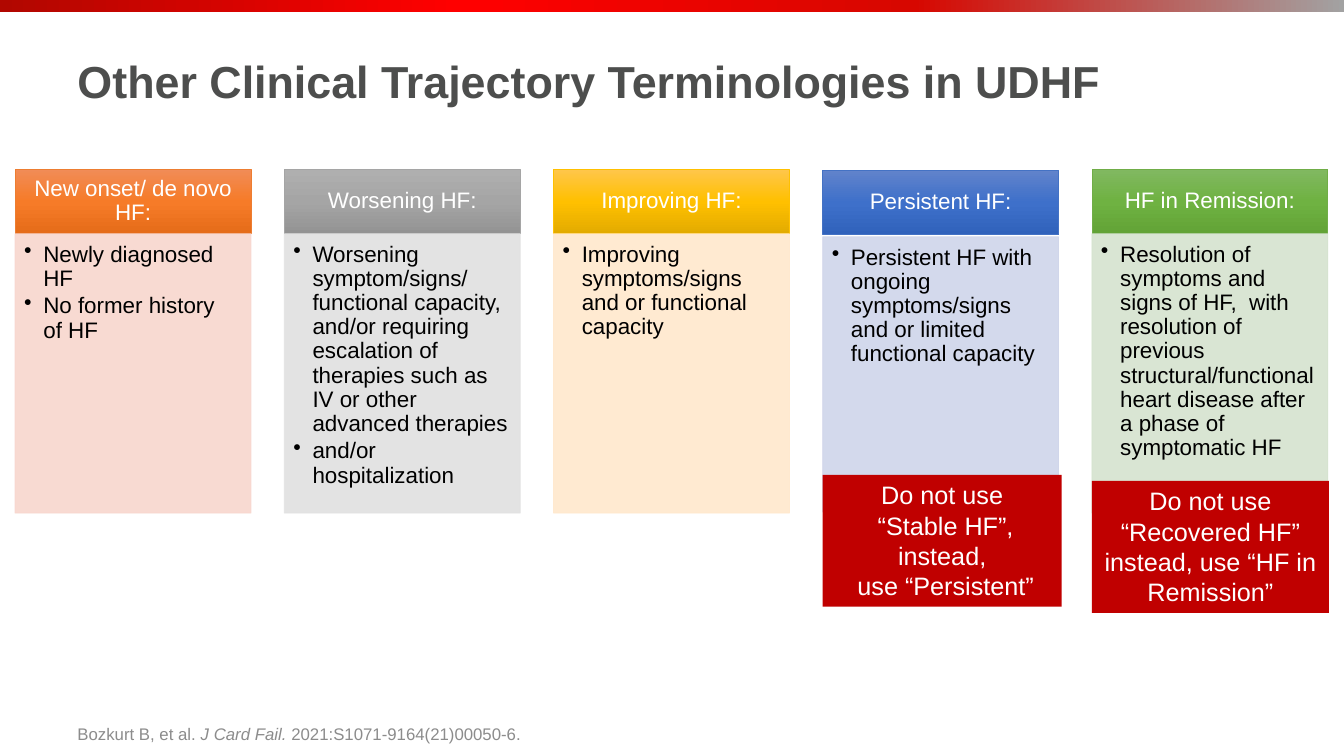
from lxml.etree import SubElement
from pptx import Presentation
from pptx.dml.color import RGBColor
from pptx.enum.shapes import MSO_SHAPE as Preset
from pptx.enum.text import MSO_ANCHOR as Anchor, PP_ALIGN as Align
from pptx.oxml.ns import qn
from pptx.util import Inches, Pt

# Column grid, in inches
LEFT, PITCH, WIDTH = 0.15, 2.67, 2.34
HEAD_TOP, HEAD_HEIGHT, BODY_BOTTOM = 1.68, 0.64, 5.09
HEAD_INSETS = (0.12, 0.07, 0.12, 0.07)
BODY_INSETS = (0.09, 0.09, 0.12, 0.14)
PLAIN_INSETS = (0.1, 0.05, 0.1, 0.05)
WARNING = "C00000"
BANNER = [(0, "B10700"), (14, "D00400"), (34, "FF0000"), (68, "D70700"), (100, "A2A2A2")]

# Heading, its three gradient colours, line, body colour, offset, gap below heading, bullets
COLUMNS = [
    ("New onset/ de novo HF:", ("F18C57", "F67B28", "E56C19"), "ED7D31", "F8D7CE", 0, 0,
     ["Newly diagnosed HF", "No former history of HF"]),
    ("Worsening HF:", ("AFAFAF", "A5A5A5", "939393"), "A5A5A5", "E1E1E1", 0, 0,
     ["Worsening symptom/signs/ functional capacity, and/or requiring escalation of "
      "therapies such as IV or other advanced therapies", "and/or hospitalization"]),
    ("Improving HF:", ("FFC64B", "FFC000", "E3AB00"), "FFC000", "FFE8CC", 0, 0,
     ["Improving symptoms/signs  and or functional capacity"]),
    ("Persistent HF:", ("6183CB", "3E70CA", "3062BB"), "4472C4", "CFD5EA", 0.01, 0.02,
     ["Persistent HF with ongoing symptoms/signs and or limited functional capacity"]),
    ("HF in Remission:", ("81B861", "6FB242", "62A336"), "70AD47", "D5E3CF", 0, 0,
     ["Resolution of symptoms and signs of HF,  with resolution of previous  "
      "structural/functional heart disease after a phase of symptomatic HF"]),
]

# Column, top, width, lines of each warning
WARNINGS = [
    (4, 4.77, 2.35, ["Do not use “Recovered HF” instead, use “HF in Remission”"]),
    (3, 4.71, 2.37, ["Do not use", " “Stable HF”, instead,", " use “Persistent”"]),
]


def color(code):
    return RGBColor.from_string(code)


class SlideBuilder:
    font = "Arial"

    def __init__(self, page):
        self.page = page

    def rectangle(self, left, top, width, height, fill=None, line=None):
        box = self.page.shapes.add_shape(
            Preset.RECTANGLE, *map(Inches, (left, top, width, height)))
        box.shadow.inherit = False
        if fill:
            box.fill.solid()
            box.fill.fore_color.rgb = color(fill)
        if line:
            box.line.color.rgb = color(line)
            box.line.width = Pt(0.5)
        else:
            box.line.fill.background()
        return box

    def gradient(self, box, stops, angle):
        box.fill.gradient()
        box.fill.gradient_angle = angle
        stop_list = box.element.spPr.find(qn("a:gradFill")).find(qn("a:gsLst"))
        stop_list.clear()
        for place, code in stops:
            stop = SubElement(stop_list, qn("a:gs"), pos=str(place * 1000))
            SubElement(stop, qn("a:srgbClr"), val=code)

    def opacity(self, box, percent):
        for tint in box.element.spPr.iter(qn("a:srgbClr")):
            SubElement(tint, qn("a:alpha"), val=str(percent * 1000))

    def text_box(self, left, top, width, height):
        return self.page.shapes.add_textbox(*map(Inches, (left, top, width, height)))

    def add_text(self, box, paras, size, code, anchor=Anchor.TOP, align=Align.LEFT,
                 insets=PLAIN_INSETS, spacing=None, bullets=False, bold=False):
        """Each paragraph is a list of (text, italic) runs."""
        frame = box.text_frame
        frame.word_wrap = True
        frame.vertical_anchor = anchor
        (frame.margin_left, frame.margin_top,
         frame.margin_right, frame.margin_bottom) = map(Inches, insets)
        for index, runs in enumerate(paras):
            para = frame.add_paragraph() if index else frame.paragraphs[0]
            para.alignment = align
            if spacing:
                para.line_spacing = spacing
            if bullets:
                self.bullet(para, size)
            for text, italic in runs:
                span = para.add_run()
                span.text = text
                span.font.name = self.font
                span.font.size = Pt(size)
                span.font.bold = bold
                span.font.italic = italic
                span.font.color.rgb = color(code)

    def bullet(self, para, size):
        para.space_after = Pt(size * 0.15)
        props = para._p.get_or_add_pPr()
        props.set("marL", str(Inches(0.19)))
        props.set("indent", str(-Inches(0.19)))
        SubElement(props, qn("a:buChar"), char="•")

    def column(self, index, heading, shades, line, body_fill, offset, gap, points):
        left, top = LEFT + index * PITCH, HEAD_TOP + offset
        head = self.rectangle(left, top, WIDTH, HEAD_HEIGHT, line=line)
        self.gradient(head, zip((0, 50, 100), shades), 270)
        self.add_text(head, [[(heading, False)]], 16, "FFFFFF", Anchor.MIDDLE, Align.CENTER,
                      HEAD_INSETS, 0.9)
        body_top = top + HEAD_HEIGHT + gap
        body = self.rectangle(left, body_top, WIDTH, BODY_BOTTOM - offset - body_top,
                              body_fill, body_fill)
        self.opacity(body, 90)
        self.add_text(body, [[(point, False)] for point in points], 16, "000000",
                      insets=BODY_INSETS, spacing=0.9, bullets=True)

    def warning(self, index, top, width, lines):
        box = self.rectangle(LEFT + index * PITCH, top, width, 1.31, WARNING)
        self.add_text(box, [[(line, False)] for line in lines], 18, "FFFFFF",
                      align=Align.CENTER)


def main():
    deck = Presentation()
    deck.slide_width, deck.slide_height = Inches(13.33), Inches(7.5)
    builder = SlideBuilder(deck.slides.add_slide(deck.slide_layouts[6]))

    # Banner and title
    banner = builder.rectangle(0, 0, 13.33, 0.12)
    builder.gradient(banner, BANNER, 0)
    title = builder.text_box(0.67, 0.07, 11.75, 1.45)
    builder.add_text(title, [[("Other Clinical Trajectory Terminologies in UDHF", False)]],
                     32, "4D4E4D", Anchor.MIDDLE, bold=True)

    # Citation
    citation = builder.text_box(0.67, 6.95, 9.86, 0.48)
    builder.add_text(citation, [[("Bozkurt B, et al. ", False), ("J Card Fail. ", True),
                                 ("2021:S1071-9164(21)00050-6.", False)]],
                     12, "8C8C8C", Anchor.BOTTOM)

    # Columns and the warnings over them
    for index, column in enumerate(COLUMNS):
        builder.column(index, *column)
    for warning in WARNINGS:
        builder.warning(*warning)

    deck.save("out.pptx")


if __name__ == "__main__":
    main()
